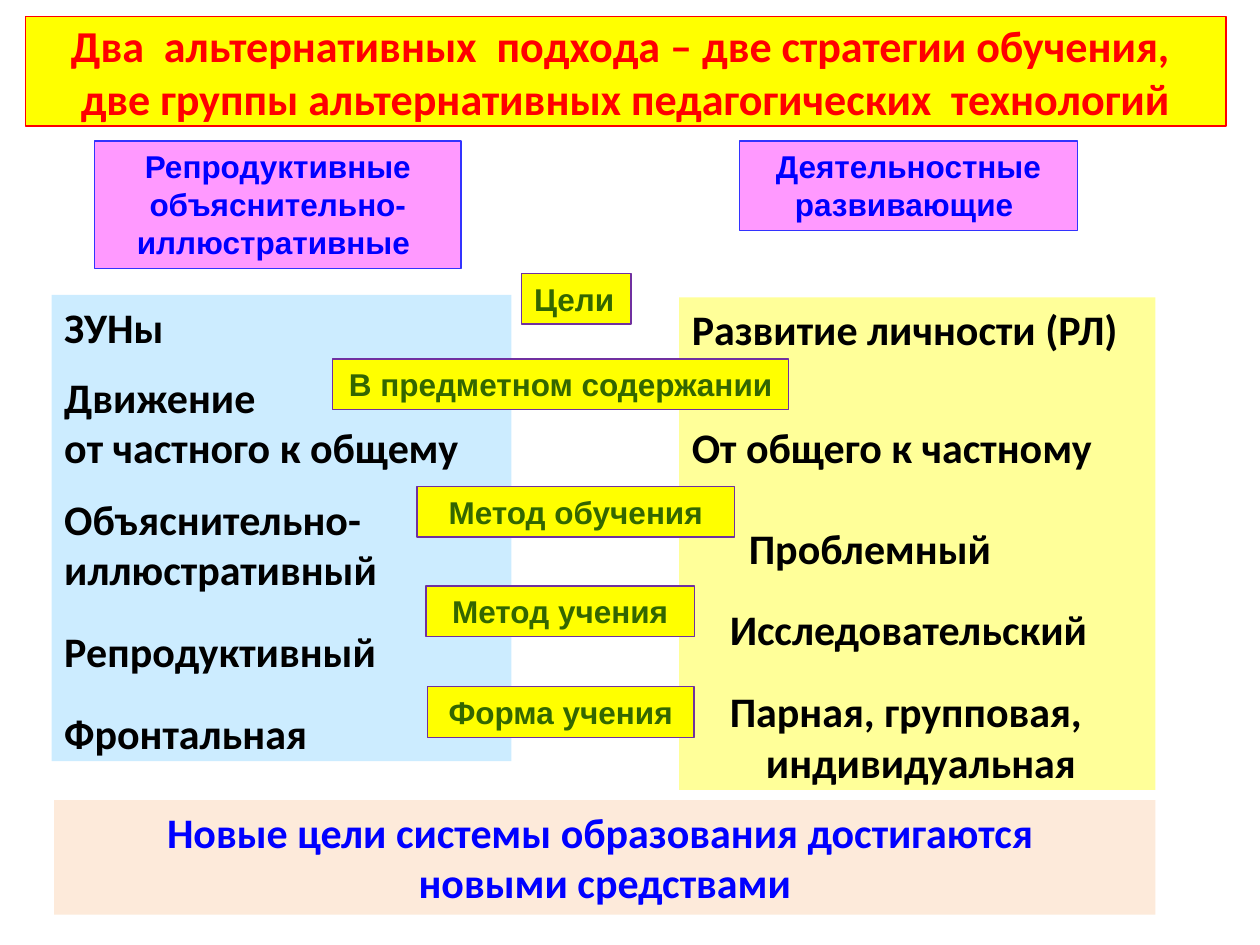
import dataclasses

import pptx
import pptx.dml.color
import pptx.enum.shapes
import pptx.enum.text
import pptx.oxml.xmlchemy
import pptx.util
import lxml.etree
from pptx.oxml.ns import qn

Pt = pptx.util.Pt
ALIGN = pptx.enum.text.PP_ALIGN
ANCHOR = pptx.enum.text.MSO_ANCHOR


@dataclasses.dataclass(frozen=True)
class Theme:
    heading_font: str = "Calibri"
    label_font: str = "Arial"
    title_size: float = 25.2
    body_size: float = 24
    label_size: float = 18
    line_width: float = 0.75
    black: str = "000000"
    red: str = "FF0000"
    blue: str = "0000FF"
    green: str = "336600"
    yellow: str = "FFFF00"
    pink: str = "FF99FF"
    pale_blue: str = "CCECFF"
    pale_yellow: str = "FFFF99"
    peach: str = "FDEADA"
    pink_edge: str = "3333FF"
    purple_edge: str = "7030A0"


THEME = Theme()

# List items: text, space before, left margin, first-line indent
REPRODUCTIVE = [
    ("ЗУНы", 0, 0, 0),
    ("Движение", 11.3, 0, 0),
    ("от частного к общему", 0, 0, 0),
    ("Объяснительно-иллюстративный", 12, 0, 0),
    ("Репродуктивный", 18, 0, 0),
    ("Фронтальная", 18, 0, 0),
]
DEVELOPING = [
    ("Развитие личности (РЛ)", 0, 0, 0),
    ("От общего к частному", 38.7, 0, 0),
    ("Проблемный", 28.5, 32.6, 0),
    ("Исследовательский", 18, 21.7, 0),
    ("Парная, групповая, индивидуальная", 18, 42.4, -20.7),
]

# Comparison labels: text, left, top, width, alignment
CRITERIA = [
    ("Цели", 298.1, 156.2, 62.6, ALIGN.LEFT),
    ("В предметном содержании", 190.1, 205.2, 260.6, ALIGN.CENTER),
    ("Метод обучения", 238.3, 277.9, 181.4, ALIGN.CENTER),
    ("Метод учения", 243.4, 334.8, 153.4, ALIGN.CENTER),
    ("Форма учения", 244.1, 392.4, 152.6, ALIGN.CENTER),
]


def rgb(color):
    return pptx.dml.color.RGBColor.from_string(color)


def style_box(shape, area, fill, edge=None):
    """Place a shape and set its fill and outline."""
    shape.left, shape.top, shape.width, shape.height = map(Pt, area)
    shape.fill.solid()
    shape.fill.fore_color.rgb = rgb(fill)
    if edge:
        shape.line.color.rgb = rgb(edge)
        shape.line.width = Pt(THEME.line_width)
    else:
        shape.line.fill.background()
    frame = shape.text_frame
    frame.word_wrap = True
    frame.auto_size = pptx.enum.text.MSO_AUTO_SIZE.NONE
    return frame


def style_paragraph(para, font, size, color, align):
    para.alignment = align
    para.font.name = font
    para.font.size = Pt(size)
    para.font.bold = True
    para.font.color.rgb = rgb(color)


def set_title(title, text, area):
    frame = style_box(title, area, THEME.yellow, THEME.red)
    frame.vertical_anchor = ANCHOR.MIDDLE
    frame.text = text
    style_paragraph(frame.paragraphs[0], THEME.heading_font,
                    THEME.title_size, THEME.red, ALIGN.CENTER)


def set_list(body, items, area, fill):
    frame = style_box(body, area, fill)
    frame.vertical_anchor = ANCHOR.TOP
    frame.text = "\n".join(item[0] for item in items)
    for para, (_, before, left, indent) in zip(frame.paragraphs, items):
        style_paragraph(para, THEME.heading_font, THEME.body_size,
                        THEME.black, ALIGN.LEFT)
        para.space_before = Pt(before)
        # Indents and the missing bullet have no public property
        properties = para._p.get_or_add_pPr()
        properties.set("marL", str(Pt(left)))
        properties.set("indent", str(Pt(indent)))
        bullet = lxml.etree.Element(qn("a:buNone"))
        properties.find(qn("a:defRPr")).addprevious(bullet)


def add_box(page, text, area, fill, edge, font, size, color,
            align=ALIGN.CENTER):
    box = page.shapes.add_shape(
        pptx.enum.shapes.MSO_SHAPE.RECTANGLE, *map(Pt, area))
    box.shadow.inherit = False
    frame = style_box(box, area, fill, edge)
    frame.vertical_anchor = ANCHOR.TOP
    frame.text = text
    for para in frame.paragraphs:
        style_paragraph(para, font, size, color, align)


def main():
    deck = pptx.Presentation()
    deck.slide_width, deck.slide_height = Pt(720), Pt(540)
    page = deck.slides.add_slide(deck.slide_layouts.get_by_name("Two Content"))
    title, left_list, right_list = page.placeholders

    # Title and the two compared lists
    set_title(title,
              "Два  альтернативных  подхода – две стратегии обучения, \v"
              "две группы альтернативных педагогических  технологий",
              (14.4, 9.4, 686.2, 62.6))
    set_list(left_list, REPRODUCTIVE, (29.5, 168.5, 262.8, 266.4),
             THEME.pale_blue)
    set_list(right_list, DEVELOPING, (388.1, 169.9, 272.2, 281.5),
             THEME.pale_yellow)

    # Column headings
    for text, area in (
        ("Репродуктивные объяснительно-иллюстративные ",
         (54, 80.6, 209.5, 72.7)),
        ("Деятельностные развивающие ", (422.6, 80.6, 193, 51.1)),
    ):
        add_box(page, text, area, THEME.pink, THEME.pink_edge,
                THEME.label_font, THEME.label_size, THEME.blue)

    # Criteria between the columns
    for text, left, top, width, align in CRITERIA:
        add_box(page, text, (left, top, width, 29), THEME.yellow,
                THEME.purple_edge, THEME.label_font, THEME.label_size,
                THEME.green, align)

    # Conclusion
    add_box(page,
            "Новые цели системы образования достигаются \nновыми средствами",
            (31, 457.2, 629.3, 65.5), THEME.peach, None,
            THEME.heading_font, THEME.body_size, THEME.blue)

    deck.save("out.pptx")


if __name__ == "__main__":
    main()
